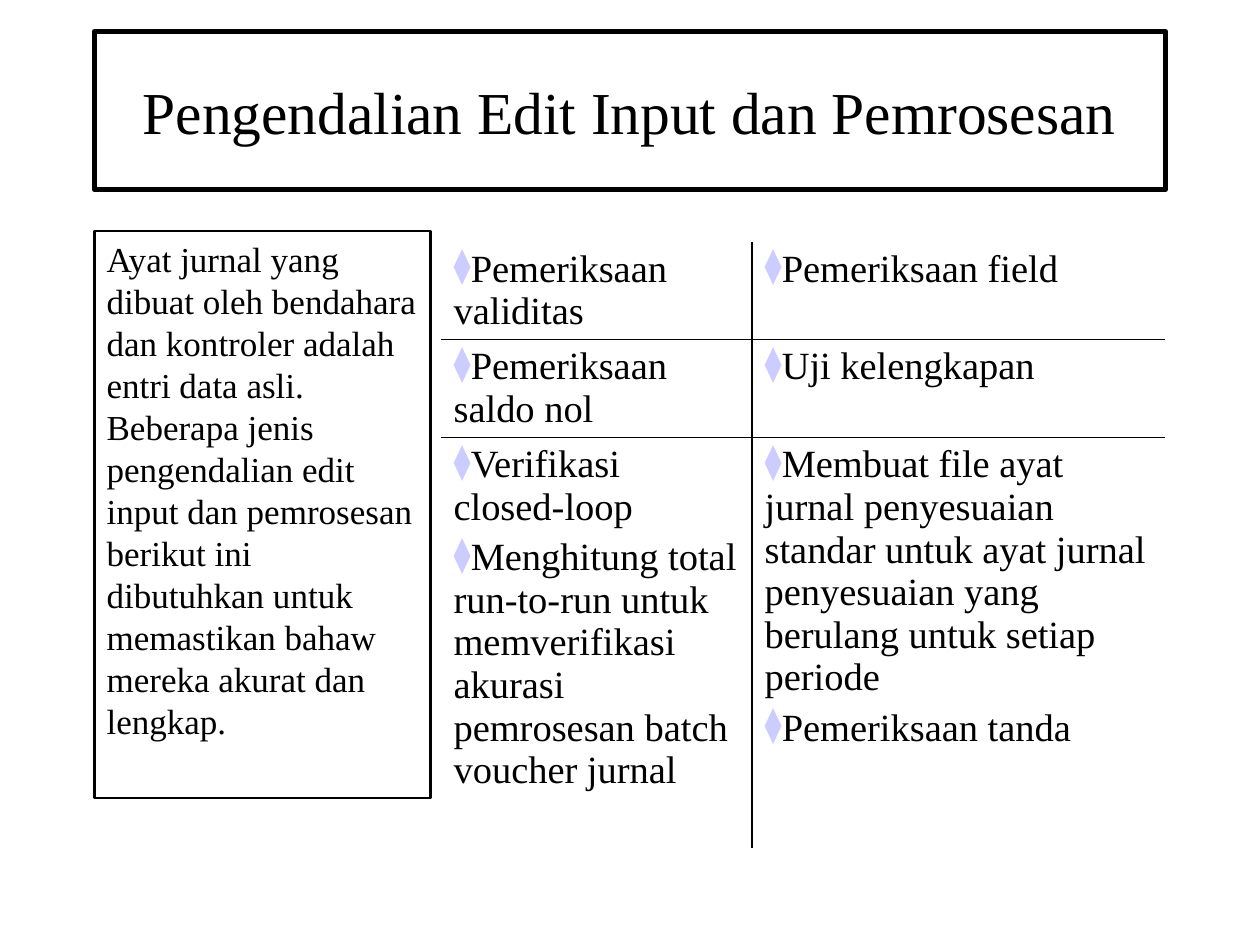
from lxml import etree
from pptx import Presentation
from pptx.dml.color import RGBColor
from pptx.enum.shapes import MSO_SHAPE
from pptx.enum.text import MSO_ANCHOR, PP_ALIGN
from pptx.oxml.ns import qn
from pptx.util import Cm, Pt

RECTANGLE = MSO_SHAPE.RECTANGLE
TOP, MIDDLE = MSO_ANCHOR.TOP, MSO_ANCHOR.MIDDLE
LEFT, CENTER = PP_ALIGN.LEFT, PP_ALIGN.CENTER
FONT = "Times New Roman"
BLACK, LAVENDER = "000000", "CCCCFF"

TITLE = "Pengendalian Edit Input dan Pemrosesan"
INTRODUCTION = (
    "Ayat jurnal yang dibuat oleh bendahara dan kontroler adalah entri data asli. "
    "Beberapa jenis pengendalian edit input dan pemrosesan berikut ini dibutuhkan "
    "untuk memastikan bahaw mereka akurat dan lengkap."
)
CONTROLS = [
    [["Pemeriksaan validitas"], ["Pemeriksaan field"]],
    [["Pemeriksaan saldo nol"], ["Uji kelengkapan"]],
    [
        ["Verifikasi closed-loop",
         "Menghitung total run-to-run untuk memverifikasi akurasi "
         "pemrosesan batch voucher jurnal"],
        ["Membuat file ayat jurnal penyesuaian standar untuk ayat jurnal "
         "penyesuaian yang berulang untuk setiap periode",
         "Pemeriksaan tanda"],
    ],
]
COLUMN_WIDTHS = [6.27, 8.33]
ROW_HEIGHTS = [1.57, 1.57, 8.28]


def color(value):
    return RGBColor.from_string(value)


def add_text(para, text, size):
    span = para.add_run()
    span.text = text
    span.font.name = FONT
    span.font.size = Pt(size)
    span.font.color.rgb = color(BLACK)


def add_framed_text(page, area, text, size, line_width, anchor=TOP, align=LEFT):
    box = page.shapes.add_shape(RECTANGLE, *[Cm(length) for length in area])
    box.shadow.inherit = False
    box.fill.background()
    box.line.color.rgb = color(BLACK)
    box.line.width = Pt(line_width)
    frame = box.text_frame
    frame.word_wrap = True
    frame.vertical_anchor = anchor
    para = frame.paragraphs[0]
    para.alignment = align
    para.line_spacing = Pt(size * 1.2)
    add_text(para, text, size)


def add_bullet(para):
    properties = para._p.get_or_add_pPr()
    properties.set("marL", "0")
    properties.set("indent", "0")
    bullet_color = etree.SubElement(properties, qn("a:buClr"))
    etree.SubElement(bullet_color, qn("a:srgbClr"), val=LAVENDER)
    etree.SubElement(properties, qn("a:buSzPct"), val="90000")
    etree.SubElement(properties, qn("a:buChar"), char="⧫")


def add_borders(cell, visible_sides):
    """Draw the named sides (L, R, T, B) and hide the others."""
    properties = cell._tc.get_or_add_tcPr()
    for side in "LRTB":
        line = etree.SubElement(properties, qn(f"a:ln{side}"), w=str(Pt(1)))
        if side in visible_sides:
            fill = etree.SubElement(line, qn("a:solidFill"))
            etree.SubElement(fill, qn("a:srgbClr"), val=BLACK)
        else:
            etree.SubElement(line, qn("a:noFill"))


def fill_cell(cell, items, size=22):
    frame = cell.text_frame
    for index, item in enumerate(items):
        para = frame.add_paragraph() if index else frame.paragraphs[0]
        para.space_before = Pt(size * 0.2)
        add_bullet(para)
        add_text(para, item, size)


def add_controls_table(page):
    rows, columns = len(ROW_HEIGHTS), len(COLUMN_WIDTHS)
    table = page.shapes.add_table(
        rows, columns, Cm(8.89), Cm(4.87), Cm(sum(COLUMN_WIDTHS)), Cm(sum(ROW_HEIGHTS))
    ).table
    table.first_row = False
    table.horz_banding = False
    for column, width in zip(table.columns, COLUMN_WIDTHS):
        column.width = Cm(width)
    for row, height in zip(table.rows, ROW_HEIGHTS):
        row.height = Cm(height)
    for r, row_items in enumerate(CONTROLS):
        for c, items in enumerate(row_items):
            cell = table.cell(r, c)
            inner = {"L": c > 0, "R": c < columns - 1, "T": r > 0, "B": r < rows - 1}
            add_borders(cell, [side for side, shown in inner.items() if shown])
            cell.fill.background()
            fill_cell(cell, items)


def main():
    deck = Presentation()
    deck.slide_width, deck.slide_height = Cm(25.4), Cm(19.05)
    page = deck.slides.add_slide(deck.slide_layouts[6])
    add_framed_text(page, (1.9, 0.64, 21.59, 3.18), TITLE, 34, 3, MIDDLE, CENTER)
    add_framed_text(page, (1.9, 4.66, 6.78, 11.43), INTRODUCTION, 20, 1.5)
    add_controls_table(page)
    deck.save("out.pptx")


if __name__ == "__main__":
    main()
